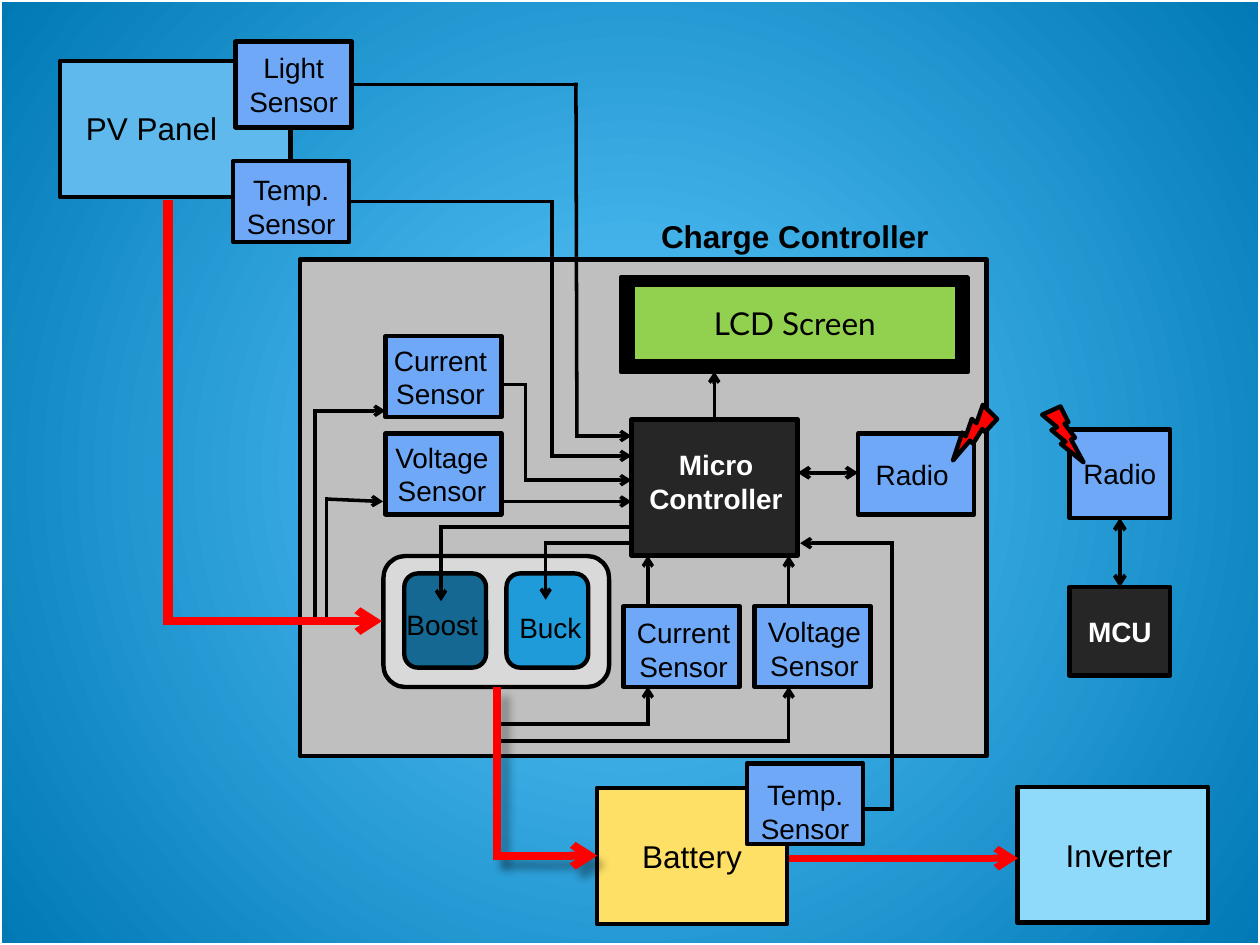
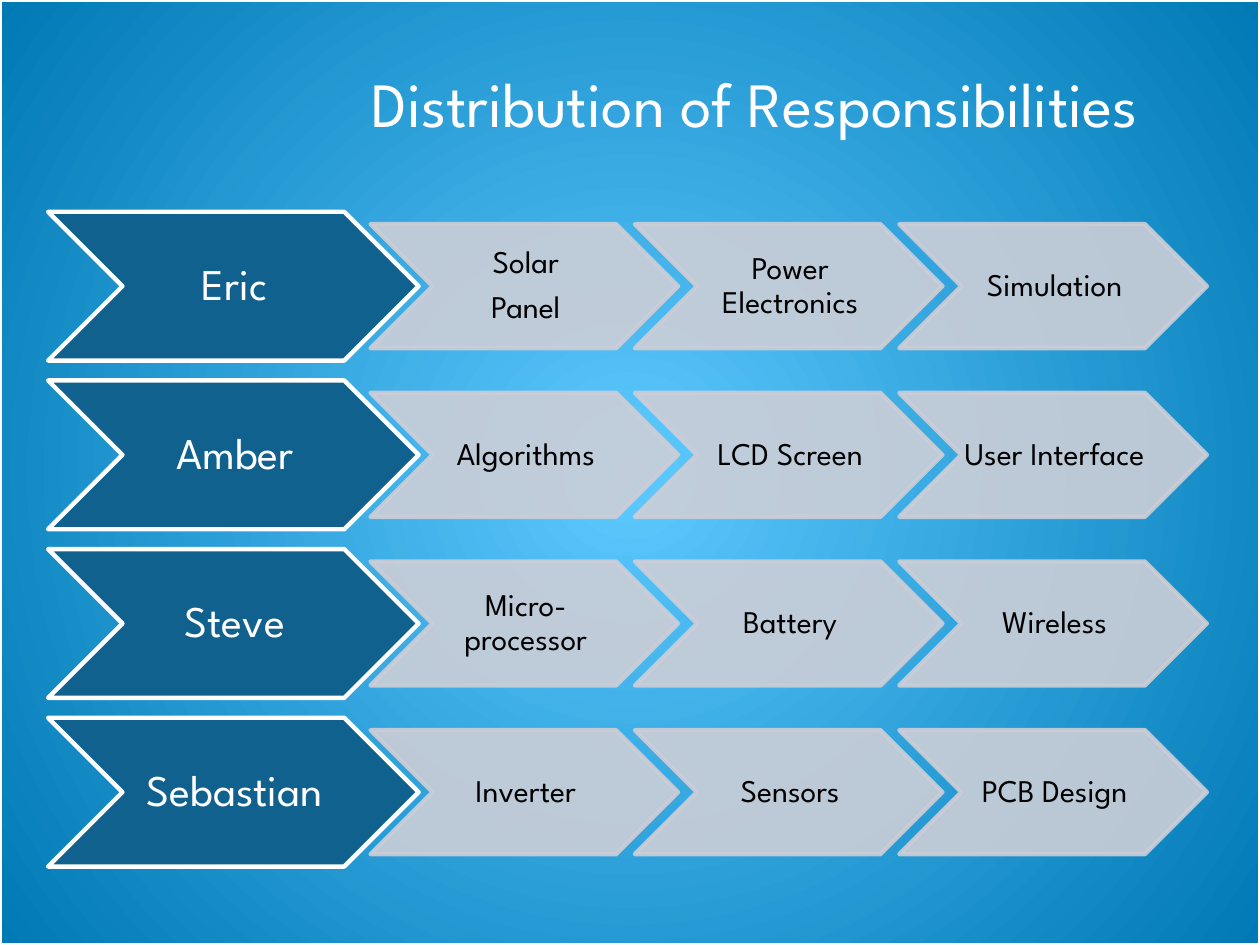
from itertools import pairwise
from typing import NamedTuple

from pptx import Presentation
from pptx.dml.color import RGBColor
from pptx.enum.shapes import MSO_CONNECTOR, MSO_SHAPE
from pptx.enum.text import MSO_ANCHOR, PP_ALIGN
from pptx.oxml import parse_xml
from pptx.oxml.ns import nsdecls, qn
from pptx.oxml.xmlchemy import OxmlElement
from pptx.util import Cm, Pt

# Colours
BLACK = RGBColor(0x00, 0x00, 0x00)
WHITE = RGBColor(0xFF, 0xFF, 0xFF)
GLOW_BLUE = RGBColor(0x5D, 0xC9, 0xFF)
DEEP_BLUE = RGBColor(0x00, 0x79, 0xB5)
SENSOR_BLUE = RGBColor(0x6F, 0xA8, 0xF7)
PANEL_BLUE = RGBColor(0x60, 0xB9, 0xEC)
INVERTER_BLUE = RGBColor(0x8F, 0xD9, 0xFB)
BOOST_BLUE = RGBColor(0x14, 0x68, 0x91)
BUCK_BLUE = RGBColor(0x1F, 0x9B, 0xDA)
NAME_BLUE = RGBColor(0x11, 0x61, 0x8F)
TASK_GREY = RGBColor(0xCC, 0xCE, 0xD7)
CASE_GREY = RGBColor(0xBF, 0xBF, 0xBF)
CONVERTER_GREY = RGBColor(0xD9, 0xD9, 0xD9)
CHIP_GREY = RGBColor(0x26, 0x26, 0x26)
LCD_GREEN = RGBColor(0x92, 0xD0, 0x50)
BATTERY_YELLOW = RGBColor(0xFF, 0xE0, 0x66)
POWER_RED = RGBColor(0xFF, 0x00, 0x00)

DIAGRAM_FONT = "Arial"
LCD_FONT = "Lato"
TITLE_FONT = "League Spartan"
SENSOR_SIZE = (2.34, 1.63)

RESPONSIBILITIES = [
    ("Eric", ["Solar\nPanel", "Power Electronics", "Simulation"]),
    ("Amber", ["Algorithms", "LCD Screen", "User Interface"]),
    ("Steve", ["Micro-\vprocessor", "Battery", "Wireless"]),
    ("Sebastian", ["Inverter", "Sensors", "PCB Design"]),
]


class Box(NamedTuple):
    """A region in centimetres."""
    left: float
    top: float
    width: float
    height: float

    def inner(self, left, top, width, height):
        return Box(self.left + left, self.top + top, width, height)

    def points(self, *offsets):
        return [(self.left + x, self.top + y) for x, y in offsets]

    def lengths(self):
        return [Cm(value) for value in self]


# Shared helpers
def format_text(text_frame, size, font, colour, bold=False):
    for paragraph in text_frame.paragraphs:
        paragraph.alignment = PP_ALIGN.CENTER
        for run in paragraph.runs:
            run.font.size = Pt(size)
            run.font.name = font
            run.font.bold = bold
            run.font.color.rgb = colour


def set_margins(text_frame, left=0.0, top=0.0, right=0.0, bottom=0.0):
    text_frame.margin_left, text_frame.margin_top = Cm(left), Cm(top)
    text_frame.margin_right, text_frame.margin_bottom = Cm(right), Cm(bottom)


def add_block(slide, box, fill, text="", size=16, font=DIAGRAM_FONT,
              text_colour=BLACK, bold=False, shift=(0, 0),
              preset=MSO_SHAPE.RECTANGLE, line=BLACK, line_width=2.5):
    """Add a shape; shift moves its centred text right and down."""
    shape = slide.shapes.add_shape(preset, *box.lengths())
    shape.shadow.inherit = False
    if fill is None:
        shape.fill.background()
    else:
        shape.fill.solid()
        shape.fill.fore_color.rgb = fill
    if line is None:
        shape.line.fill.background()
    else:
        shape.line.color.rgb = line
        shape.line.width = Pt(line_width)
    if text:
        text_frame = shape.text_frame
        text_frame.text = text
        text_frame.word_wrap = " " in text  # a single word never breaks
        text_frame.vertical_anchor = MSO_ANCHOR.MIDDLE
        across, down = shift
        set_margins(text_frame, max(0, 2 * across), max(0, 2 * down),
                    max(0, -2 * across), max(0, -2 * down))
        format_text(text_frame, size, font, text_colour, bold)
    return shape


def add_sensor(slide, region, left, top, text, shift=(0, 0)):
    add_block(slide, region.inner(left, top, *SENSOR_SIZE), SENSOR_BLUE, text, shift=shift)


def add_bolt(slide, box, rotation):
    bolt = add_block(slide, box, POWER_RED, preset=MSO_SHAPE.LIGHTNING_BOLT)
    bolt.rotation = rotation


def add_wire(slide, points, colour=BLACK, width=2.0, arrow=True, both=False, shadow=False):
    """Join the points with straight lines, with an arrow at the last."""
    segments = list(pairwise(points))
    for number, (start, end) in enumerate(segments, 1):
        wire = slide.shapes.add_connector(
            MSO_CONNECTOR.STRAIGHT, *[Cm(value) for value in (*start, *end)])
        wire.line.color.rgb = colour
        wire.line.width = Pt(width)
        outline = wire.line._get_or_add_ln()
        if arrow and number == len(segments):
            for tag in ["a:headEnd"] * both + ["a:tailEnd"]:
                arrowhead = OxmlElement(tag)
                arrowhead.set("type", "arrow")
                outline.append(arrowhead)
        else:
            outline.set("cap", "sq")
        effects = OxmlElement("a:effectLst")
        if shadow:
            effects.append(parse_xml(
                f'<a:outerShdw {nsdecls("a")} blurRad="63500" dist="88900" dir="3000000">'
                '<a:srgbClr val="000000"><a:alpha val="35000"/></a:srgbClr></a:outerShdw>'))
        wire.element.spPr.append(effects)


def set_background(master):
    fill = master.background.fill
    fill.gradient()
    for stop, position, colour in zip(fill.gradient_stops, (0, 1), (GLOW_BLUE, DEEP_BLUE)):
        stop.position = position
        stop.color.rgb = colour
    linear = next(master.element.iter(qn("a:lin")))
    linear.getparent().replace(linear, parse_xml(
        f'<a:path {nsdecls("a")} path="circle">'
        '<a:fillToRect l="50000" t="50000" r="50000" b="50000"/></a:path>'))


def add_slide(presentation, layout_index):
    slide = presentation.slides.add_slide(presentation.slide_layouts[layout_index])
    add_block(slide, Box(0, 0, 25.4, 19.05), None, line=WHITE, line_width=2)
    return slide


# Block diagram regions
def draw_solar_panel(slide, region):
    add_block(slide, region, PANEL_BLUE, "PV Panel", 18, shift=(-0.48, -0.03))
    add_block(slide, region.inner(3.54, -0.39, 2.34, 1.73), SENSOR_BLUE, "Light\nSensor")
    add_sensor(slide, region, 3.49, 2.02, "Temp. Sensor", (0, 0.1))


def draw_charge_controller(slide, region):
    add_block(slide, region.inner(6.29, -0.99, 7.37, 1.02), None,
              "Charge Controller", 18, bold=True, line=None)
    add_block(slide, region, CASE_GREY)

    # Screen
    add_block(slide, region.inner(6.47, 0.36, 6.99, 1.91), BLACK)
    add_block(slide, region.inner(6.7, 0.51, 6.55, 1.55), LCD_GREEN,
              "LCD Screen", 18, LCD_FONT)

    # Converter stage
    rounded = MSO_SHAPE.ROUNDED_RECTANGLE
    add_block(slide, region.inner(1.68, 5.98, 4.55, 2.64), CONVERTER_GREY, preset=rounded)
    add_block(slide, region.inner(2.1, 6.33, 1.65, 1.9), BOOST_BLUE, "Boost",
              shift=(-0.06, 0.08), preset=rounded)
    add_block(slide, region.inner(4.16, 6.33, 1.65, 1.9), BUCK_BLUE, "Buck",
              shift=(0.06, 0.13), preset=rounded)

    # Sensors, chip and radio
    add_sensor(slide, region, 1.72, 1.55, "Current Sensor", (-0.06, 0))
    add_sensor(slide, region, 1.72, 3.51, "Voltage Sensor", (-0.03, 0))
    add_sensor(slide, region, 6.52, 6.99, "Current Sensor", (0.04, 0.05))
    add_sensor(slide, region, 9.16, 6.99, "Voltage Sensor", (0.04, 0.03))
    add_block(slide, region.inner(6.68, 3.23, 3.35, 2.74), CHIP_GREY, "Micro Controller",
              text_colour=WHITE, bold=True, shift=(0.03, -0.13))
    add_sensor(slide, region, 11.25, 3.51, "Radio", (-0.08, 0))
    add_bolt(slide, region.inner(13.1, 2.92, 0.91, 1.09), 73.8)

    # Wiring inside the case
    for route in [
        [(4.06, 2.52), (4.54, 2.52), (4.54, 4.45), (6.68, 4.45)],
        [(4.06, 4.88), (6.68, 4.88)],
        [(6.68, 5.39), (2.84, 5.39), (2.84, 6.89)],
        [(6.68, 5.72), (4.95, 5.72), (4.95, 6.86)],
        [(7.01, 6.99), (7.01, 5.97)],
        [(9.85, 6.99), (9.85, 5.97)],
        [(8.35, 3.23), (8.35, 2.26)],
        [(0.3, 7.24), (0.3, 3.05), (1.72, 3.05)],
        [(0.53, 7.24), (0.53, 4.83), (1.67, 4.88)],
        [(3.96, 9.37), (7.01, 9.37), (7.01, 8.61)],
        [(3.96, 9.71), (9.85, 9.71), (9.85, 8.61)],
    ]:
        add_wire(slide, region.points(*route))
    add_wire(slide, region.points((10.03, 4.3), (11.25, 4.3)), width=2.25, both=True)


def draw_remote_station(slide, region):
    height = 1.78
    lower_top = region.height - height
    add_block(slide, region.inner(0, 0, region.width, height), SENSOR_BLUE, "Radio")
    add_block(slide, region.inner(0, lower_top, region.width, height), CHIP_GREY, "MCU",
              text_colour=WHITE, bold=True)
    add_bolt(slide, region.inner(-0.58, -0.46, 0.91, 1.09), 4.5)
    middle = region.width / 2
    add_wire(slide, region.points((middle, height), (middle, lower_top)),
             width=2.25, both=True)


def draw_battery(slide, region):
    add_block(slide, region, BATTERY_YELLOW, "Battery", 18)
    add_sensor(slide, region, 3.03, -0.5, "Temp. Sensor", (0, 0.15))


def draw_inverter(slide, region):
    add_block(slide, region, INVERTER_BLUE, "Inverter", 18, shift=(0.13, 0))


def draw_links(slide, region):
    # Signals into the micro controller
    for route in [
        [(7.09, 1.7), (11.61, 1.7), (11.63, 8.79), (12.73, 8.79)],
        [(7.04, 4.06), (11.13, 4.06), (11.13, 9.19), (12.73, 9.19)],
        [(17.4, 16.31), (17.98, 16.31), (17.98, 10.95), (16.13, 10.95)],
    ]:
        add_wire(slide, region.points(*route))

    # Power path
    add_wire(slide, region.points((3.38, 4.13), (3.38, 12.5)), POWER_RED, 5.75, arrow=False)
    add_wire(slide, region.points((3.3, 12.52), (7.7, 12.52)), POWER_RED, 4.5)
    add_wire(slide, region.points((10.01, 13.92), (10.01, 17.25), (12.04, 17.25)),
             POWER_RED, 4.5, shadow=True)
    add_wire(slide, region.points((15.9, 17.3), (20.52, 17.3)), POWER_RED, 4)


def build_diagram_slide(presentation):
    slide = add_slide(presentation, 6)
    draw_solar_panel(slide, Box(1.21, 1.23, 4.65, 2.74))
    draw_charge_controller(slide, Box(6.05, 5.23, 13.84, 10.01))
    draw_remote_station(slide, Box(21.56, 8.66, 2.03, 4.96))
    draw_battery(slide, Box(12.03, 15.89, 3.84, 2.74))
    draw_inverter(slide, Box(20.51, 15.86, 3.84, 2.74))
    draw_links(slide, Box(0, 0, 25.4, 19.05))


# Responsibilities
def add_chevron(slide, box, text, fill, line, size, text_colour, alpha=None):
    shape = add_block(slide, box, fill, text, size, TITLE_FONT, text_colour,
                      preset=MSO_SHAPE.CHEVRON, line=line)
    set_margins(shape.text_frame, left=0.06, top=0.03, bottom=0.03)
    for paragraph in shape.text_frame.paragraphs:
        paragraph.line_spacing = 0.9
        paragraph.space_after = Pt(0.35 * size)
    if alpha is not None:
        for colour in shape.element.spPr.iter(qn("a:srgbClr")):
            opacity = OxmlElement("a:alpha")
            opacity.set("val", str(alpha * 1000))
            colour.append(opacity)


def draw_responsibility_row(slide, region, name, tasks):
    add_chevron(slide, region.inner(0, 0, 7.47, region.height), name,
                NAME_BLUE, WHITE, 25, WHITE)
    for column, task in enumerate(tasks):
        add_chevron(slide, region.inner(6.5 + 5.33 * column, 0.25, 6.2, region.height - 0.5),
                    task, TASK_GREY, TASK_GREY, 18, BLACK, alpha=90)


def build_responsibilities_slide(presentation):
    slide = add_slide(presentation, 5)
    title = slide.shapes.title
    title.left, title.top, title.width, title.height = Box(5.34, 1.17, 19.76, 1.8).lengths()
    title.text_frame.text = "Distribution of Responsibilities"
    title.text_frame.vertical_anchor = MSO_ANCHOR.TOP
    format_text(title.text_frame, 36, TITLE_FONT, WHITE)
    for row, (name, tasks) in enumerate(RESPONSIBILITIES):
        draw_responsibility_row(slide, Box(0.97, 4.27 + 3.4 * row, 23.36, 3), name, tasks)


def main():
    presentation = Presentation()
    presentation.slide_width, presentation.slide_height = Cm(25.4), Cm(19.05)
    set_background(presentation.slide_master)
    build_diagram_slide(presentation)
    build_responsibilities_slide(presentation)
    presentation.save("out.pptx")


if __name__ == "__main__":
    main()
